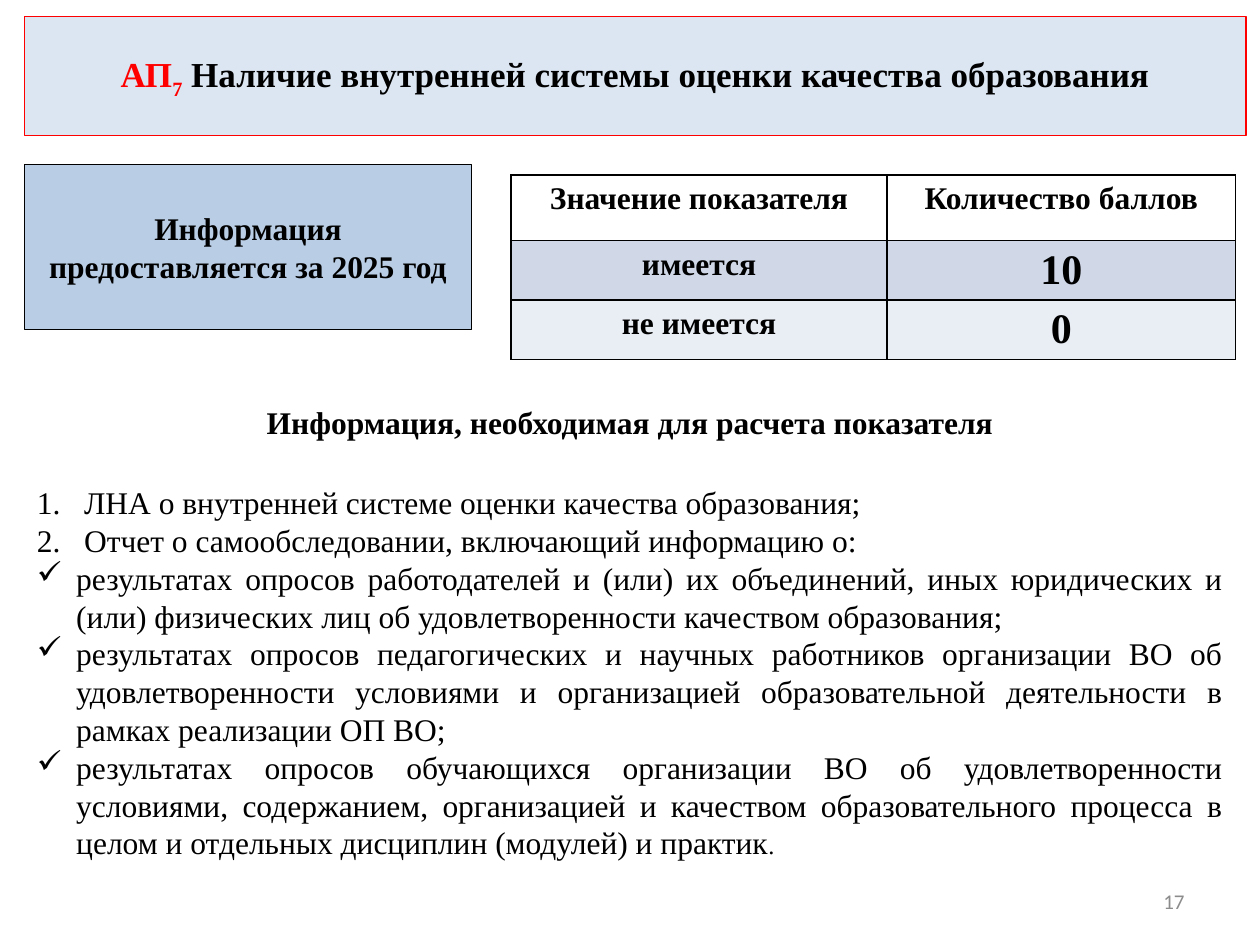
import pptx
import pptx.dml.color
import pptx.enum.shapes
import pptx.enum.text
import pptx.oxml
import pptx.oxml.ns
import pptx.util

Pt = pptx.util.Pt
Align = pptx.enum.text.PP_ALIGN
Anchor = pptx.enum.text.MSO_ANCHOR
RECT = pptx.enum.shapes.MSO_SHAPE.RECTANGLE
NS = pptx.oxml.ns.nsdecls("a")

# Colours, fonts and type sizes
THEME = {
    "ink": "000000", "red": "FF0000", "gray": "8C8C8C", "white": "FFFFFF",
    "pale": "DCE6F2", "blue": "B9CDE5", "odd": "D0D8E8", "even": "E9EDF4",
    "serif": "Times New Roman", "sans": "Calibri",
    "dot": 14, "text": 18, "title": 20, "score": 24, "page": 12,
}


def tint(name):
    return pptx.dml.color.RGBColor.from_string(THEME[name])


def apply(item, values):
    for key, value in values.items():
        setattr(item, key, value)


class Page:
    """Holds the theme and the slide being filled."""

    def __init__(self, slide):
        self.slide = slide

    def run(self, para, text, size="text", color="ink", face="serif",
            bold=False, base=0):
        font = para.add_run()
        font.text = text
        font = font.font
        apply(font, {"name": THEME[face], "size": Pt(THEME[size]), "bold": bold})
        font.color.rgb = tint(color)
        if base:
            font._element.set("baseline", str(base))

    def line(self, para, runs, align=Align.CENTER, after=0):
        apply(para, {"alignment": align, "space_after": Pt(after)})
        for text, style in runs:
            self.run(para, text, **style)

    def mark(self, para, bullet, indent):
        props = para._p.get_or_add_pPr()
        props.set("marL", str(Pt(indent)))
        props.set("indent", str(-Pt(indent)))
        props.append(pptx.oxml.parse_xml(bullet))

    def frame(self, shape, anchor):
        apply(shape.text_frame, {"word_wrap": True, "vertical_anchor": anchor})
        return shape.text_frame

    def text(self, box, anchor=Anchor.TOP):
        return self.frame(self.slide.shapes.add_textbox(*map(Pt, box)), anchor)

    def panel(self, box, fill, edge, runs):
        shape = self.slide.shapes.add_shape(RECT, *map(Pt, box))
        shape.shadow.inherit = False
        shape.fill.solid()
        shape.fill.fore_color.rgb = tint(fill)
        shape.line.color.rgb = tint(edge)
        shape.line.width = Pt(0.75)
        self.line(self.frame(shape, Anchor.MIDDLE).paragraphs[0], runs)

    def cell(self, cell, text, size, fill):
        for side in "LRTB":
            cell._tc.get_or_add_tcPr().append(pptx.oxml.parse_xml(
                f'<a:ln{side} {NS} w="{Pt(1)}"><a:solidFill>'
                f'<a:srgbClr val="{THEME["ink"]}"/></a:solidFill></a:ln{side}>'))
        cell.margin_bottom = Pt(1)
        cell.fill.solid()
        cell.fill.fore_color.rgb = tint(fill)
        self.line(cell.text_frame.paragraphs[0],
                  [(text, {"size": size, "bold": True})])

    def table(self, box, cols, rows, data, fills):
        grid = self.slide.shapes.add_table(
            len(rows), len(cols), *map(Pt, box)).table
        for col, width in zip(grid.columns, cols):
            col.width = Pt(width)
        for r, (height, texts) in enumerate(zip(rows, data)):
            grid.rows[r].height = Pt(height)
            for c, text in enumerate(texts):
                size = "score" if r and c else "text"
                self.cell(grid.cell(r, c), text, size, fills[r])


def main():
    deck = pptx.Presentation()
    apply(deck, {"slide_width": Pt(720), "slide_height": Pt(540)})
    page = Page(deck.slides.add_slide(deck.slide_layouts[6]))

    # Page number
    number = page.text((516, 500.5, 168, 28.75), Anchor.MIDDLE)
    page.line(number.paragraphs[0],
              [("17", {"size": "page", "color": "gray", "face": "sans"})],
              Align.RIGHT)

    # Score table
    page.table((292, 100, 414, 105.5), (215, 199), (37.5, 34, 34),
               [("Значение показателя", "Количество баллов"),
                ("имеется", "10"), ("не имеется", "0")],
               ("white", "odd", "even"))

    # Reporting period
    page.panel((14, 94, 255.5, 94.5), "blue", "ink",
               [("Информация предоставляется за 2025 год", {"bold": True})])

    # Required information
    body = page.text((14, 227, 692, 281))
    page.line(body.paragraphs[0],
              [("Информация, необходимая для расчета показателя",
                {"bold": True})], after=24)
    count = f'<a:buAutoNum {NS} type="arabicPeriod"/>'
    check = f'<a:buChar {NS} char="✓"/>'
    items = [
        (count, 27, "ЛНА о внутренней системе оценки качества образования;"),
        (count, 27, "Отчет о самообследовании, включающий информацию о:"),
        (check, 22.5, "результатах опросов работодателей и (или) их объединений, "
         "иных юридических и (или) физических лиц об удовлетворенности "
         "качеством образования;"),
        (check, 22.5, "результатах опросов педагогических и научных работников "
         "организации ВО об удовлетворенности условиями и организацией "
         "образовательной деятельности в рамках реализации ОП ВО;"),
        (check, 22.5, "результатах опросов обучающихся организации ВО об "
         "удовлетворенности условиями, содержанием, организацией и качеством "
         "образовательного процесса в целом и отдельных дисциплин (модулей) "
         "и практик"),
    ]
    for bullet, indent, text in items:
        para = body.add_paragraph()
        page.mark(para, bullet, indent)
        page.line(para, [(text, {})], Align.JUSTIFY)
    page.run(para, ".", size="dot")

    # Title
    head = {"size": "title", "bold": True}
    page.panel((14, 9.5, 698, 68), "pale", "red", [
        ("АП", {**head, "color": "red"}),
        ("7", {**head, "color": "red", "base": -25000}),
        (" Наличие внутренней системы оценки качества образования", head)])

    deck.save("out.pptx")


if __name__ == "__main__":
    main()
